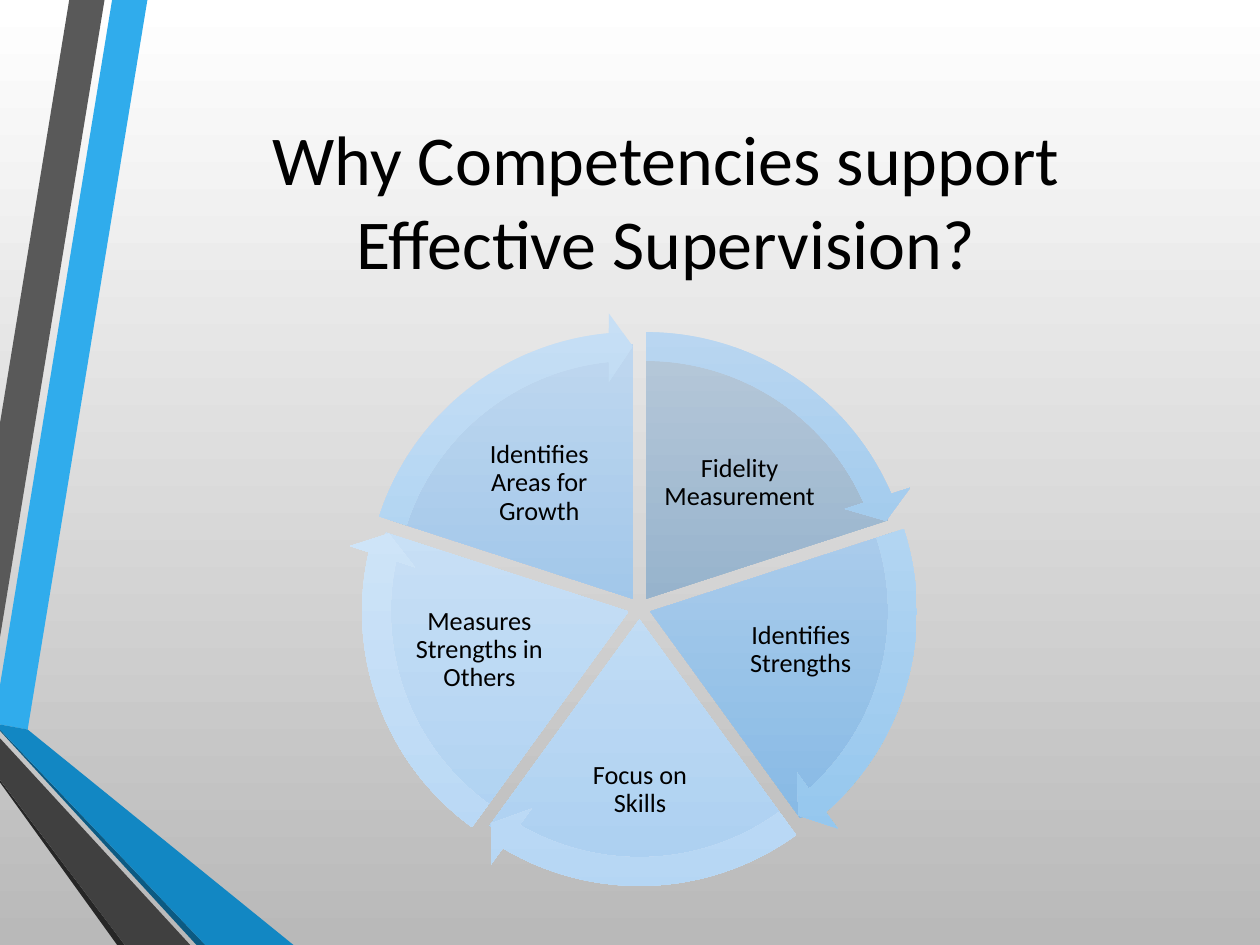
import dataclasses
import math
import typing

import pptx
import pptx.dml.color
import pptx.enum.shapes
import pptx.enum.text
import pptx.util

COLUMNS, ROWS = 1000, 750
CELL = pptx.util.Inches(10) // COLUMNS
CENTER = (507.5, 482.5)
WEDGE_SIZE, ARROW_SIZE, EXPLOSION = 405, 455, 9
FULL_TURN = 216
WEDGE_TURN = FULL_TURN / 5
Gradient = tuple[str, str]


@dataclasses.dataclass(frozen=True)
class Band:
    color: str
    points: tuple[tuple[int, int], ...]


@dataclasses.dataclass(frozen=True)
class Box:
    left: float
    top: float
    width: float
    height: float

    def lengths(self) -> list[int]:
        return [round(value * CELL) for value in (self.left, self.top, self.width, self.height)]


@dataclasses.dataclass(frozen=True)
class Label:
    text: str
    box: Box
    size: int
    inset: int
    line_spacing: float


@dataclasses.dataclass(frozen=True)
class Segment:
    text: str
    box: Box
    wedge: Gradient
    arrow: Gradient


BANDS = (
    Band("30ACEC", ((0, 544), (0, 575), (22, 579), (117, 0), (89, 0))),
    Band("595959", ((83, 0), (55, 0), (0, 336), (0, 506))),
    Band("262626", ((0, 619), (0, 621), (93, 750), (99, 750))),
    Band("0C5A82", ((0, 579), (0, 580), (156, 750), (163, 750))),
    Band("1287C3", ((0, 579), (163, 750), (233, 750), (22, 579), (0, 575))),
    Band("404040", ((0, 619), (99, 750), (151, 750), (0, 586))),
)
TITLE = Label("Why Competencies support Effective Supervision?", Box(107, 50, 843, 217), 40, 20, 1.0)
MEDIUM_WEDGE, MEDIUM_ARROW = ("BFD7EF", "82B7E4"), ("C7DFF5", "8FC4ED")
LIGHT_WEDGE, LIGHT_ARROW = ("D7E8F8", "ACD0F1"), ("DDECFA", "B5D6F4")
SEGMENTS = (
    Segment("Fidelity Measurement", Box(522, 340, 130, 87), ("B6C8D9", "769DBF"), ("BBD7F1", "78B7E6")),
    Segment("Identifies Strengths", Box(575, 468, 121, 96), MEDIUM_WEDGE, MEDIUM_ARROW),
    Segment("Focus on Skills", Box(450, 574, 116, 106), LIGHT_WEDGE, LIGHT_ARROW),
    Segment("Measures Strengths in Others", Box(320, 468, 121, 96), LIGHT_WEDGE, LIGHT_ARROW),
    Segment("Identifies Areas for Growth", Box(363, 340, 130, 87), MEDIUM_WEDGE, MEDIUM_ARROW),
)


def rgb(color: str) -> pptx.dml.color.RGBColor:
    return pptx.dml.color.RGBColor.from_string(color)


def set_format(target: typing.Any, values: dict[str, typing.Any]) -> None:
    for name, value in values.items():
        setattr(target, name, value)


def fill_gradient(fill: typing.Any, colors: Gradient) -> None:
    fill.gradient()
    fill.gradient_angle = 270
    for stop, color, position in zip(fill.gradient_stops, colors, (0, 1)):
        stop.color.rgb = rgb(color)
        stop.position = position


def draw_band(slide: typing.Any, band: Band) -> None:
    builder = slide.shapes.build_freeform(*band.points[0], scale=CELL)
    builder.add_line_segments(band.points[1:], close=True)
    shape = builder.convert_to_shape()
    shape.fill.solid()
    shape.fill.fore_color.rgb = rgb(band.color)
    shape.line.fill.background()
    shape.shadow.inherit = False


def draw_label(slide: typing.Any, label: Label) -> None:
    frame = slide.shapes.add_textbox(*label.box.lengths()).text_frame
    inset = label.inset * CELL
    set_format(frame, {
        "word_wrap": True,
        "vertical_anchor": pptx.enum.text.MSO_ANCHOR.MIDDLE,
        "margin_left": inset,
        "margin_right": inset,
        "margin_top": inset,
        "margin_bottom": inset,
    })
    paragraph = frame.paragraphs[0]
    set_format(paragraph, {
        "alignment": pptx.enum.text.PP_ALIGN.CENTER,
        "line_spacing": label.line_spacing,
    })
    run = paragraph.add_run()
    run.text = label.text
    set_format(run.font, {"name": "Calibri", "size": pptx.util.Pt(label.size)})
    run.font.color.rgb = rgb("000000")


def draw_sector(
    slide: typing.Any, kind: typing.Any, size: int, index: int,
    colors: Gradient, adjustments: tuple[float, ...],
) -> None:
    middle = math.radians(72 * index - 54)
    left = CENTER[0] + EXPLOSION * math.cos(middle) - size / 2
    top = CENTER[1] + EXPLOSION * math.sin(middle) - size / 2
    shape = slide.shapes.add_shape(kind, *Box(left, top, size, size).lengths())
    for position, value in enumerate(adjustments):
        shape.adjustments[position] = value
    fill_gradient(shape.fill, colors)
    shape.line.fill.background()
    shape.shadow.inherit = False


def draw_cycle(slide: typing.Any) -> None:
    kinds = pptx.enum.shapes.MSO_SHAPE
    starts = [(162 + WEDGE_TURN * index) % FULL_TURN for index in range(len(SEGMENTS))]
    for index, (segment, start) in enumerate(zip(SEGMENTS, starts)):
        end = (start + WEDGE_TURN) % FULL_TURN
        draw_sector(slide, kinds.PIE, WEDGE_SIZE, index, segment.wedge, (start, end))
        draw_label(slide, Label(segment.text, segment.box, 15, 2, 0.9))
    for index, (segment, start) in enumerate(zip(SEGMENTS, starts)):
        end = (start + 39.92) % FULL_TURN
        draw_sector(slide, kinds.CIRCULAR_ARROW, ARROW_SIZE, index, segment.arrow,
                    (0.05, 3.28, end, start, 0.06))


def main() -> None:
    presentation = pptx.Presentation()
    set_format(presentation, {"slide_width": COLUMNS * CELL, "slide_height": ROWS * CELL})
    slide = presentation.slides.add_slide(presentation.slide_layouts[6])
    fill_gradient(slide.background.fill, ("FFFFFF", "B9B9B9"))
    for band in BANDS:
        draw_band(slide, band)
    draw_label(slide, TITLE)
    draw_cycle(slide)
    presentation.save("out.pptx")


if __name__ == "__main__":
    main()
